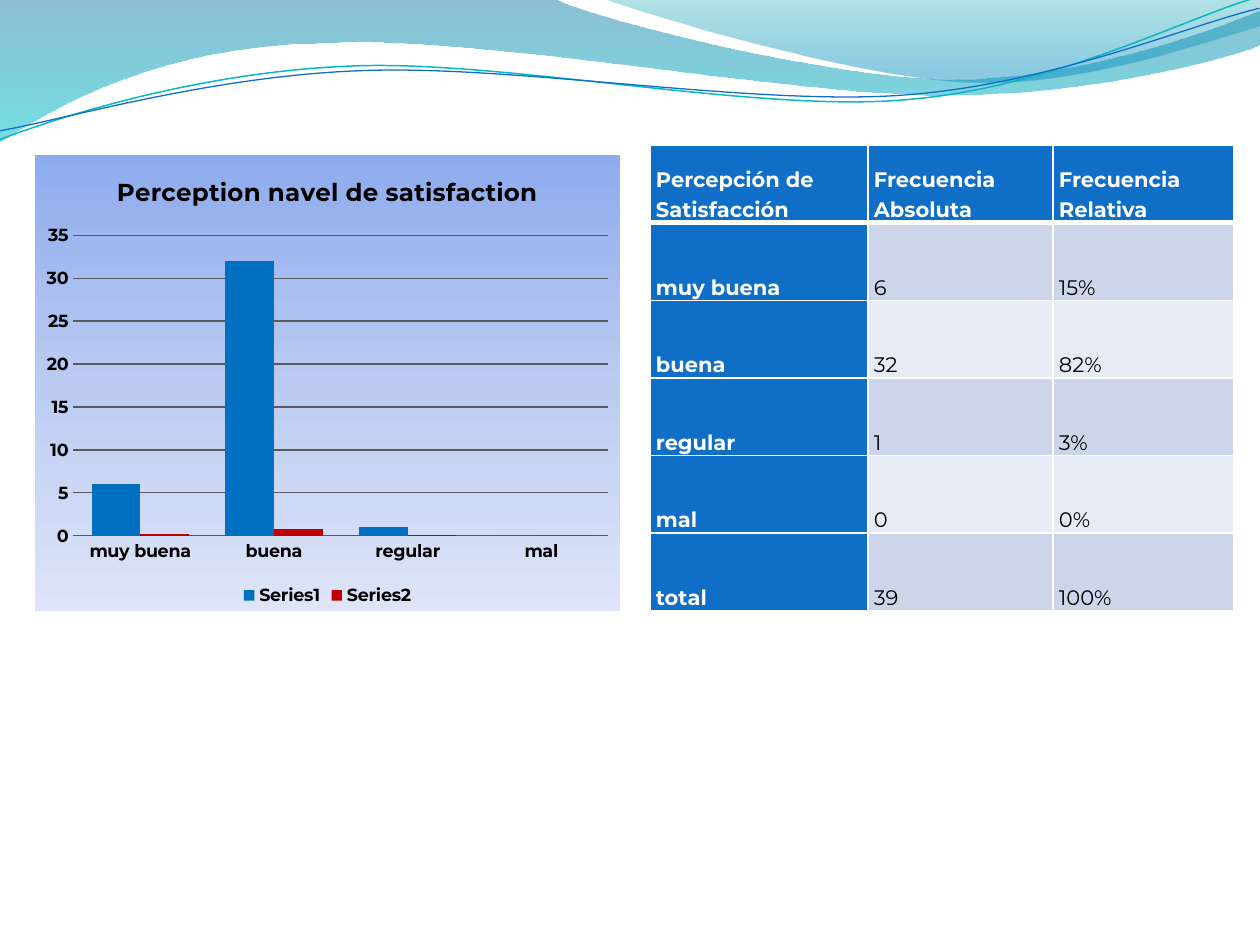
"""Build a satisfaction survey slide with a wave header, a column chart and a frequency table."""
from pptx import Presentation
from pptx.chart.data import CategoryChartData
from pptx.dml.color import RGBColor
from pptx.enum.chart import XL_CHART_TYPE, XL_LEGEND_POSITION, XL_TICK_MARK
from pptx.enum.text import MSO_ANCHOR
from pptx.oxml import parse_xml
from pptx.oxml.ns import nsdecls, qn
from pptx.util import Pt

COLUMNS = XL_CHART_TYPE.COLUMN_CLUSTERED
BOTTOM = XL_LEGEND_POSITION.BOTTOM
NO_TICK = XL_TICK_MARK.NONE
ANCHOR_BOTTOM = MSO_ANCHOR.BOTTOM
PX = 914400 / 126
FONT = "Montserrat"
BLUE, WHITE, BLACK, GREY = "0F6FC6", "FFFFFF", "000000", "595959"
rgb = RGBColor.from_string


def gradient(stops):
    marks = "".join(
        f'<a:gs pos="{place * 1000}"><a:srgbClr val="{color}">'
        f'<a:alpha val="{alpha * 1000}"/></a:srgbClr></a:gs>'
        for place, color, alpha in stops
    )
    return parse_xml(
        f'<a:gradFill {nsdecls("a")} rotWithShape="1"><a:gsLst>{marks}</a:gsLst>'
        '<a:lin ang="5400000" scaled="0"/></a:gradFill>'
    )


def draw_path(page, start, segments, close):
    builder = page.shapes.build_freeform(*start, scale=PX)
    for segment in segments:
        builder.add_line_segments(list(zip(segment[::2], segment[1::2])), close=False)
    shape = builder.convert_to_shape()
    outline = shape._element.spPr.find(".//" + qn("a:path"))
    lines = iter(outline.findall(qn("a:lnTo")))
    for segment in segments:
        first = next(lines)
        if len(segment) == 6:
            curve = parse_xml(f'<a:cubicBezTo {nsdecls("a")}/>')
            first.addprevious(curve)
            for line in (first, next(lines), next(lines)):
                curve.append(line[0])
                outline.remove(line)
    if close:
        outline.append(parse_xml(f'<a:close {nsdecls("a")}/>'))
    shape.shadow.inherit = False
    return shape


deck = Presentation()
deck.slide_width, deck.slide_height = round(1260 * PX), round(945 * PX)
page = deck.slides.add_slide(deck.slide_layouts[6])

waves = [
    ((0, 0),
     [(554, -1), (600, 21, 837, 79, 955, 79), (1075, 79, 1207, 33, 1260, 11),
      (1261, 45), (1239, 55, 1096, 96, 940, 95), (784, 95, 481, 35, 324, 43),
      (163, 45, 58, 105, -1, 142), (0, 0)],
     [(0, "0074A1", 45), (100, "00C6CF", 55)]),
    ((604, -1),
     [(641, 14, 859, 78, 969, 82), (1079, 87, 1211, 40, 1260, 26), (1260, 0), (604, -1)],
     [(0, "00A1A9", 30), (80, "008BBF", 45)]),
]
for start, segments, stops in waves:
    wave = draw_path(page, start, segments, True)
    wave.line.fill.background()
    wave._element.spPr.find(qn("a:custGeom")).addnext(gradient(stops))

strands = [
    ((-3, 110),
     [(58, 90, 199, 52, 350, 53), (499, 53, 745, 117, 896, 113),
      (1049, 110, 1184, 45, 1260, 27)], "0AB8BF", 0.85),
    ((-2, 101),
     [(57, 94, 207, 57, 357, 58), (509, 58, 750, 112, 902, 108),
      (1052, 104, 1188, 52, 1262, 38)], BLUE, 0.75),
]
for start, segments, color, width in strands:
    strand = draw_path(page, start, segments, False)
    strand.rotation = 357.3
    strand.fill.background()
    strand.line.color.rgb = rgb(color)
    strand.line.width = Pt(width)

data = CategoryChartData()
data.categories = ["muy buena", "buena", "regular", "mal"]
data.add_series("", [6, 32, 1, 0])
data.add_series("", [0.15, 0.82, 0.03, 0])
area = [round(length * PX) for length in (35, 155, 585, 456)]
chart = page.shapes.add_chart(COLUMNS, *area, data).chart
chart.has_title = True
chart.chart_title.include_in_layout = False
title = chart.chart_title.text_frame.paragraphs[0].add_run()
title.text = "Perception navel de satisfaction"
chart.has_legend = True
chart.legend.position = BOTTOM
chart.legend.include_in_layout = False
labels = [chart.category_axis.tick_labels, chart.value_axis.tick_labels, chart.legend]
for font, size in [(chart.font, 10), (title.font, 14)] + [(item.font, 10) for item in labels]:
    for name, value in {"name": FONT, "size": Pt(size), "bold": True}.items():
        setattr(font, name, value)
    font.color.rgb = rgb(BLACK)
for axis in (chart.category_axis, chart.value_axis):
    axis.major_tick_mark = axis.minor_tick_mark = NO_TICK
chart.value_axis.format.line.fill.background()
chart.value_axis.has_major_gridlines = True
for line in (chart.category_axis.format.line, chart.value_axis.major_gridlines.format.line):
    line.color.rgb = rgb(GREY)
    line.width = Pt(0.75)
plot = chart.plots[0]
plot.gap_width, plot.overlap, plot.vary_by_categories = 75, 0, False
for series, color in zip(plot.series, ("0070C0", "C00000")):
    series.invert_if_negative = False
    series.format.fill.solid()
    series.format.fill.fore_color.rgb = rgb(color)
    series._element.remove(series._element.find(qn("c:tx")))
backdrop = parse_xml(f'<c:spPr {nsdecls("c", "a")}><a:ln><a:noFill/></a:ln></c:spPr>')
backdrop.insert(0, gradient([(0, "8EABEE", 100), (50, "BBCBF2", 100), (100, "DEE5F8", 100)]))
chart._chartSpace.find(qn("c:chart")).addnext(backdrop)

rows = [
    ("Percepción de Satisfacción", "Frecuencia Absoluta", "Frecuencia Relativa"),
    ("muy buena", "6", "15%"),
    ("buena", "32", "82%"),
    ("regular", "1", "3%"),
    ("mal", "0", "0%"),
    ("total", "39", "100%"),
]
area = [round(length * PX) for length in (650, 145, 584, 466)]
table = page.shapes.add_table(len(rows), 3, *area).table
for column, width in zip(table.columns, (218, 185, 181)):
    column.width = round(width * PX)
cell_format = {
    "vertical_anchor": ANCHOR_BOTTOM,
    "margin_left": round(6 * PX),
    "margin_right": round(6 * PX),
    "margin_top": 0,
    "margin_bottom": 0,
}
for row, texts in enumerate(rows):
    for column, text in enumerate(texts):
        heading = row == 0 or column == 0
        cell = table.cell(row, column)
        for name, value in cell_format.items():
            setattr(cell, name, value)
        para = cell.text_frame.paragraphs[0]
        para.line_spacing = 1.15
        span = para.add_run()
        span.text = text
        for name, value in {"name": FONT, "size": Pt(12), "bold": heading}.items():
            setattr(span.font, name, value)
        span.font.color.rgb = rgb(WHITE if heading else BLACK)
        cell.fill.solid()
        cell.fill.fore_color.rgb = rgb(BLUE if heading else ("E7EBF5", "CCD5EA")[row % 2])
        for place, side in enumerate(("lnL", "lnR", "lnT", "lnB")):
            thick = (row, side) in ((0, "lnB"), (1, "lnT"))
            border = parse_xml(
                f'<a:{side} {nsdecls("a")} w="{Pt(3 if thick else 1)}">'
                f'<a:solidFill><a:srgbClr val="{WHITE}"/></a:solidFill></a:{side}>'
            )
            cell._tc.tcPr.insert(place, border)

deck.save("out.pptx")
